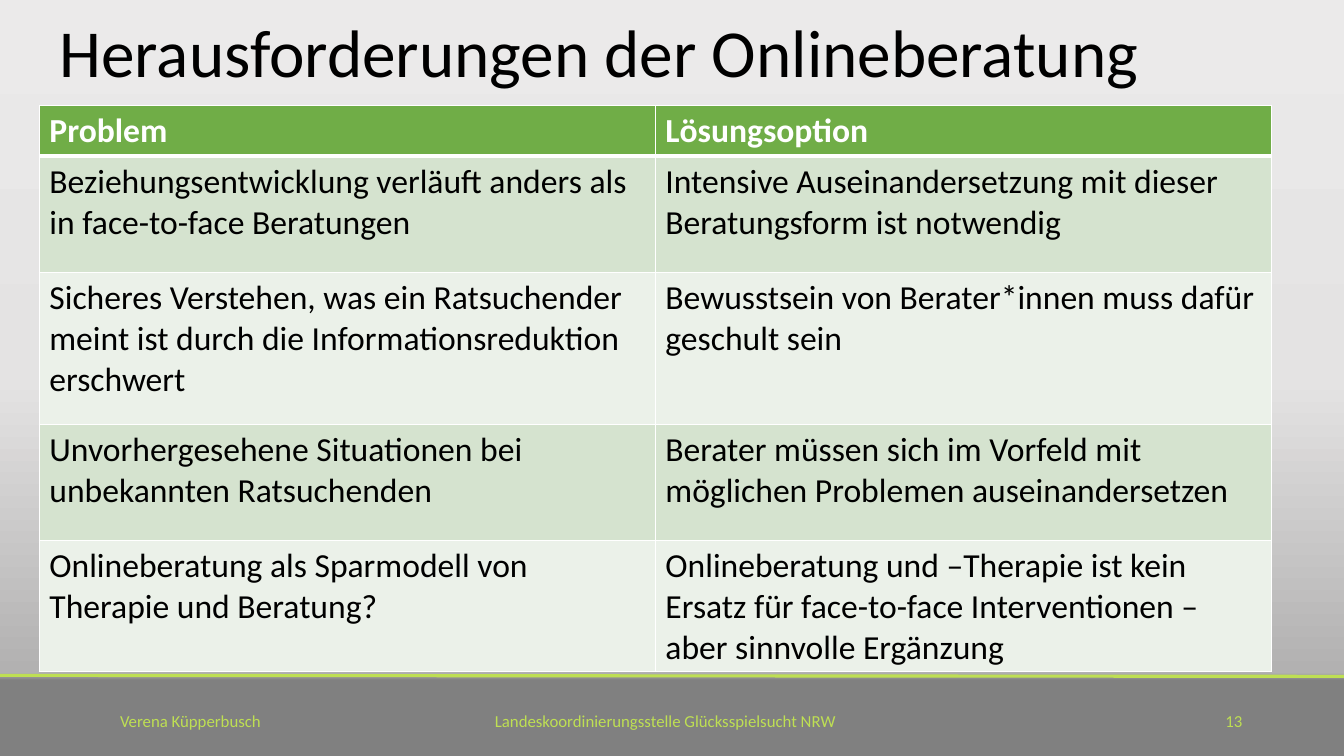
from lxml import etree
from pptx import Presentation
from pptx.dml.color import RGBColor
from pptx.enum.text import MSO_ANCHOR, PP_ALIGN
from pptx.oxml.ns import qn
from pptx.util import Inches, Pt

LEFT, CENTER, RIGHT = PP_ALIGN.LEFT, PP_ALIGN.CENTER, PP_ALIGN.RIGHT
TOP, MIDDLE = MSO_ANCHOR.TOP, MSO_ANCHOR.MIDDLE
TITLE_ONLY = 5

LIME, WHITE, BLACK = "BEDF53", "FFFFFF", "000000"
HEADER_GREEN = "70AD47"
BAND_GREENS = ("D5E3CF", "EBF1E9")
BACKGROUND_STOPS = ((0, "EBEAEA"), (50, "E4E3E3"), (89, "B2B1B1"), (90, "808080"))

TITLE_FORMAT = {"name": "Calibri", "size": Pt(48), "bold": False}
FOOTER_FORMAT = {"name": "Calibri", "size": Pt(12)}
HEADER_FORMAT = {"name": "Calibri", "size": Pt(24), "bold": True}
BODY_FORMAT = {"name": "Calibri", "size": Pt(24), "bold": False}

ROW_HEIGHTS = (0.49, 1.15, 1.51, 1.15, 1.28)
ROWS = (
    ("Problem", "Lösungsoption"),
    ("Beziehungsentwicklung verläuft anders als in face-to-face Beratungen",
     "Intensive Auseinandersetzung mit dieser Beratungsform ist notwendig"),
    ("Sicheres Verstehen, was ein Ratsuchender meint ist durch die Informationsreduktion erschwert",
     "Bewusstsein von Berater*innen muss dafür geschult sein"),
    ("Unvorhergesehene Situationen bei unbekannten Ratsuchenden",
     "Berater müssen sich im Vorfeld mit möglichen Problemen auseinandersetzen"),
    ("Onlineberatung als Sparmodell von Therapie und Beratung?",
     "Onlineberatung und –Therapie ist kein Ersatz für face-to-face Interventionen – aber sinnvolle Ergänzung"),
)


def color(value):
    return RGBColor.from_string(value)


def add_solid(parent, value):
    fill = etree.SubElement(parent, qn("a:solidFill"))
    etree.SubElement(fill, qn("a:srgbClr"), val=value)


def write(frame, text, format_values, font_color, align=LEFT):
    para = frame.paragraphs[0]
    para.alignment = align
    span = para.add_run()
    span.text = text
    for name, value in format_values.items():
        setattr(span.font, name, value)
    span.font.color.rgb = color(font_color)


def set_background(page):
    fill = page.background.fill
    fill.gradient()
    fill.gradient_angle = 270
    stops = page.element.find(".//" + qn("a:gsLst"))
    for stop in list(stops):
        stops.remove(stop)
    for position, value in BACKGROUND_STOPS:
        stop = etree.SubElement(stops, qn("a:gs"), pos=str(position * 1000))
        etree.SubElement(stop, qn("a:srgbClr"), val=value)


def add_title(page, left, top, width, height):
    title = page.shapes.title
    title.left, title.top = Inches(left), Inches(top)
    title.width, title.height = Inches(width), Inches(height)
    frame = title.text_frame
    frame.vertical_anchor = MIDDLE
    write(frame, "Herausforderungen der Onlineberatung", TITLE_FORMAT, BLACK, CENTER)
    frame.paragraphs[0].line_spacing = 0.9


def add_footer(page, left, top, width):
    rule = page.shapes.add_connector(
        1, Inches(left), Inches(top), Inches(left + width), Inches(top + 0.01))
    rule.line.color.rgb = color(LIME)
    rule.line.width = Pt(2.25)
    etree.SubElement(rule.element.spPr, qn("a:effectLst"))
    entries = (
        ("Landeskoordinierungsstelle Glücksspielsucht NRW", 4.81, 0.3, 4.79, 0.3, LEFT, TOP),
        ("Verena Küpperbusch", 0, 0.25, 3.78, 0.4, CENTER, MIDDLE),
        ("13", 9.42, 0.25, 3, 0.4, RIGHT, MIDDLE),
    )
    for text, across, down, box_width, box_height, align, anchor in entries:
        box = page.shapes.add_textbox(
            Inches(left + across), Inches(top + down), Inches(box_width), Inches(box_height))
        frame = box.text_frame
        frame.word_wrap = True
        frame.vertical_anchor = anchor
        write(frame, text, FOOTER_FORMAT, LIME, align)


def set_borders(cell, widths):
    properties = cell._tc.get_or_add_tcPr()
    for side, width in widths.items():
        border = etree.SubElement(properties, qn("a:ln" + side), w=str(Pt(width)))
        add_solid(border, WHITE)


def add_comparison(page, left, top, width):
    shape = page.shapes.add_table(
        len(ROWS), len(ROWS[0]), Inches(left), Inches(top),
        Inches(width), Inches(sum(ROW_HEIGHTS)))
    table = shape.table
    for column in table.columns:
        column.width = Inches(width / len(ROWS[0]))
    for index, (height, texts) in enumerate(zip(ROW_HEIGHTS, ROWS)):
        table.rows[index].height = Inches(height)
        is_header = index == 0
        fill = HEADER_GREEN if is_header else BAND_GREENS[(index - 1) % 2]
        format_values = HEADER_FORMAT if is_header else BODY_FORMAT
        font_color = WHITE if is_header else BLACK
        borders = {"L": 1, "R": 1, "T": 3 if index == 1 else 1, "B": 3 if is_header else 1}
        for cell, text in zip(table.rows[index].cells, texts):
            set_borders(cell, borders)
            cell.fill.solid()
            cell.fill.fore_color.rgb = color(fill)
            write(cell.text_frame, text, format_values, font_color)


def main():
    deck = Presentation()
    deck.slide_width, deck.slide_height = Inches(13.33), Inches(7.5)
    page = deck.slides.add_slide(deck.slide_layouts[TITLE_ONLY])
    set_background(page)
    add_footer(page, 0, 6.7, 13.33)
    add_title(page, 0.12, 0.13, 11.65, 0.85)
    add_comparison(page, 0.39, 1.05, 12.22)
    deck.save("out.pptx")


if __name__ == "__main__":
    main()
